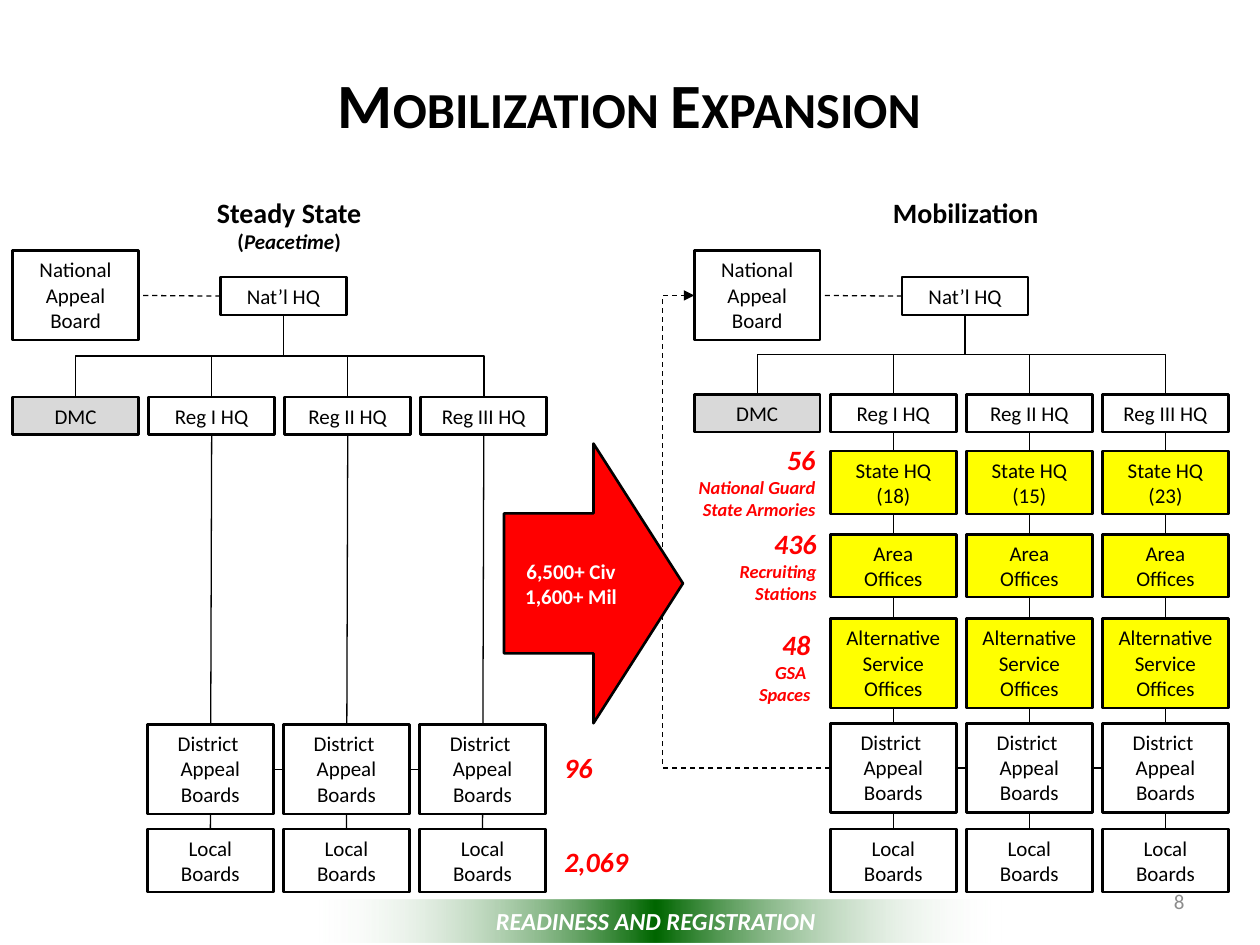
from dataclasses import dataclass

import pptx
import pptx.util
from pptx.dml.color import RGBColor
from pptx.enum.dml import MSO_LINE
from pptx.enum.shapes import MSO_CONNECTOR, MSO_SHAPE
from pptx.enum.text import MSO_ANCHOR, MSO_AUTO_SIZE, PP_ALIGN
from pptx.oxml import parse_xml
from pptx.oxml.ns import nsdecls, qn
from pptx.util import Inches, Pt

BLACK = RGBColor(0x00, 0x00, 0x00)
WHITE = RGBColor(0xFF, 0xFF, 0xFF)
RED = RGBColor(0xFF, 0x00, 0x00)
YELLOW = RGBColor(0xFF, 0xFF, 0x00)
GRAY = RGBColor(0xD9, 0xD9, 0xD9)
NUMBER_GRAY = RGBColor(0x8C, 0x8C, 0x8C)

TOP, LEFT, BOTTOM, RIGHT = range(4)
COLUMN_STEP = 1.08
REGIONS = ["Reg I HQ", "Reg II HQ", "Reg III HQ"]
APPEAL = ["National", "Appeal Board"]
DISTRICT = ["District ", "Appeal", "Boards"]
LOCAL = ["Local Boards"]


@dataclass
class Style:
    size: float = 12
    color: RGBColor = BLACK
    bold: bool = False
    italic: bool = False
    align: PP_ALIGN = PP_ALIGN.CENTER


@dataclass
class Callout:
    x: float
    y: float
    w: float
    h: float
    number: str
    places: list[str]
    align: PP_ALIGN = PP_ALIGN.RIGHT


@dataclass
class Chart:
    x: float
    region_y: float


CALLOUTS = [
    Callout(5.38, 3.46, 1.19, 0.74, "56", ["National Guard", "State Armories"]),
    Callout(5.72, 4.13, 0.86, 0.74, "436", ["Recruiting", "Stations"]),
    Callout(5.91, 4.93, 0.62, 0.72, "48", ["GSA ", "Spaces"]),
    Callout(4.38, 5.91, 0.43, 0.37, "96", [], PP_ALIGN.LEFT),
    Callout(4.38, 6.65, 0.72, 0.37, "2,069", [], PP_ALIGN.LEFT),
]


def style_paragraph(p, style: Style) -> None:
    p.alignment = style.align
    f = p.font
    f.name, f.size, f.color.rgb = "Calibri", Pt(style.size), style.color
    f.bold, f.italic = style.bold, style.italic


def write(sp, lines: list[str], style: Style, anchor=MSO_ANCHOR.TOP, wrap: bool = True):
    tf = sp.text_frame
    tf.word_wrap, tf.vertical_anchor = wrap, anchor
    if anchor == MSO_ANCHOR.TOP:
        tf.auto_size = MSO_AUTO_SIZE.SHAPE_TO_FIT_TEXT
    for i, line in enumerate(lines):
        p = tf.paragraphs[0] if i == 0 else tf.add_paragraph()
        p.add_run().text = line
        style_paragraph(p, style)
    return tf


def text_box(s, x: float, y: float, w: float, h: float, lines, style, **options):
    sp = s.shapes.add_textbox(Inches(x), Inches(y), Inches(w), Inches(h))
    return write(sp, lines, style, **options)


def add_shape(s, kind, x: float, y: float, w: float, h: float, fill=None):
    sp = s.shapes.add_shape(kind, Inches(x), Inches(y), Inches(w), Inches(h))
    sp.shadow.inherit = False
    if fill is None:
        sp.fill.background()
    else:
        sp.fill.solid()
        sp.fill.fore_color.rgb = fill
    sp.line.color.rgb, sp.line.width = BLACK, Pt(1.5)
    return sp


def unit(s, x: float, y: float, h: float, lines: list[str], fill=None):
    sp = add_shape(s, MSO_SHAPE.RECTANGLE, x, y, 1, h, fill)
    write(sp, lines, Style())
    return sp


def row(s, x: float, y: float, h: float, labels: list[list[str]], fill=None) -> list:
    return [unit(s, x + i * COLUMN_STEP, y, h, lines, fill) for i, lines in enumerate(labels)]


def join(s, a, a_side: int, b, b_side: int, kind=MSO_CONNECTOR.STRAIGHT, dash: bool = False):
    c = s.shapes.add_connector(kind, 0, 0, 0, 0)
    c.begin_connect(a, a_side)
    c.end_connect(b, b_side)
    c.line.color.rgb, c.line.width = BLACK, Pt(0.75)
    if dash:
        c.line.dash_style = MSO_LINE.DASH
    c._element.spPr.append(parse_xml(f"<a:effectLst {nsdecls('a')}/>"))
    return c


def branch(s, parent, child) -> None:
    """Elbow that leaves the parent downward and enters the child's top."""
    c = join(s, parent, BOTTOM, child, TOP, MSO_CONNECTOR.ELBOW)
    goes_right = c.end_x > c.begin_x
    center_x, center_y = c.left + c.width // 2, c.top + c.height // 2
    c.width, c.height = c.height, c.width
    c.left, c.top = center_x - c.width // 2, center_y - c.height // 2
    xfrm = c._element.spPr.find(qn("a:xfrm"))
    xfrm.set("rot", "16200000" if goes_right else "5400000")
    xfrm.set("flipH", "1" if goes_right else "0")
    xfrm.set("flipV", "0")


def headquarters(s, chart: Chart) -> tuple:
    """Draw the levels down to the regions; return appeal board and regions."""
    hq = unit(s, chart.x + 1.65, 2.2, 0.3, ["Nat’l HQ"])
    appeal = unit(s, chart.x, 1.99, 0.71, APPEAL)
    dmc = unit(s, chart.x, chart.region_y, 0.3, ["DMC"], GRAY)
    regions = row(s, chart.x + COLUMN_STEP, chart.region_y, 0.3, [[r] for r in REGIONS])
    for child in [dmc, *regions]:
        branch(s, hq, child)
    join(s, hq, LEFT, appeal, RIGHT, dash=True)
    return appeal, regions


def link_columns(s, upper: list, lower: list) -> None:
    for a, b in zip(upper, lower):
        join(s, a, BOTTOM, b, TOP)


def link_neighbors(s, boxes: list) -> None:
    for a, b in zip(boxes, boxes[1:]):
        join(s, a, RIGHT, b, LEFT)


def footer_band(s) -> None:
    sp = add_shape(s, MSO_SHAPE.RECTANGLE, 2.46, 7.14, 5.49, 0.34)
    sp.line.fill.background()
    sp.fill.gradient()
    sp.fill.gradient_angle = 0
    stops = sp._element.spPr.find(qn("a:gradFill")).find(qn("a:gsLst"))
    for stop in list(stops):
        stops.remove(stop)
    for pos, color, alpha in [(0, WHITE, 0), (50, "006600", 100), (100, WHITE, 0)]:
        stops.append(parse_xml(
            f'<a:gs {nsdecls("a")} pos="{pos * 1000}"><a:srgbClr val="{color}">'
            f'<a:alpha val="{alpha * 1000}"/></a:srgbClr></a:gs>'))
    write(sp, ["READINESS AND REGISTRATION"], Style(14, WHITE, True, True))


def main() -> None:
    prs = pptx.Presentation()
    prs.slide_width, prs.slide_height = Inches(10), Inches(7.5)
    s = prs.slides.add_slide(prs.slide_layouts[6])

    # Footer and title
    footer_band(s)
    tf = text_box(s, 0.83, 0.42, 8.33, 0.8, ["Mobilization Expansion"],
                  Style(36, bold=True), anchor=MSO_ANCHOR.MIDDLE)
    tf.paragraphs[0].runs[0].font._element.set("cap", "small")

    # Steady state: regions connect straight to the boards
    _, regions = headquarters(s, Chart(0.1, 3.15))
    locals_ = row(s, 1.17, 6.58, 0.5, [LOCAL] * 3)
    link_columns(s, regions, locals_)
    link_neighbors(s, row(s, 1.17, 5.75, 0.71, [DISTRICT] * 3, WHITE))

    # Mobilization: added levels in yellow
    appeal, regions = headquarters(s, Chart(5.51, 3.13))
    x = 5.51 + COLUMN_STEP
    states = [["State HQ", f"({count})"] for count in (18, 15, 23)]
    levels = [
        regions,
        row(s, x, 3.58, 0.5, states, YELLOW),
        row(s, x, 4.24, 0.5, [["Area Offices"]] * 3, YELLOW),
        row(s, x, 4.91, 0.71, [["Alternative", "Service Offices"]] * 3, YELLOW),
        row(s, x, 5.74, 0.71, [DISTRICT] * 3, WHITE),
        row(s, x, 6.58, 0.5, [LOCAL] * 3),
    ]
    for upper, lower in zip(levels, levels[1:]):
        link_columns(s, upper, lower)
    districts = levels[4]
    link_neighbors(s, districts)

    # Appeal route from the district boards to the national board
    route = join(s, districts[0], LEFT, appeal, LEFT, MSO_CONNECTOR.ELBOW, dash=True)
    route.line._get_or_add_ln().append(parse_xml(f'<a:tailEnd {nsdecls("a")} type="triangle"/>'))
    geometry = route._element.spPr.find(qn("a:prstGeom"))
    geometry.find(qn("a:avLst")).append(
        parse_xml(f'<a:gd {nsdecls("a")} name="adj1" fmla="val 123300"/>'))

    # Expansion arrow
    arrow = add_shape(s, MSO_SHAPE.RIGHT_ARROW, 4, 3.52, 1.42, 2.22, RED)
    write(arrow, ["6,500+ Civ", "1,600+ Mil"], Style(12, WHITE, True), MSO_ANCHOR.MIDDLE)

    # Headings
    heading = Style(16, bold=True)
    p = text_box(s, 1.54, 1.5, 1.51, 0.57, ["Steady State "], heading).paragraphs[0]
    for text, italic in [("(", False), ("Peacetime", True), (")", False)]:
        r = p.add_run()
        r.text, r.font.size, r.font.italic = text, Pt(12), italic
    text_box(s, 6.91, 1.5, 1.51, 0.37, ["Mobilization"], heading)

    # Site counts
    for c in CALLOUTS:
        tf = text_box(s, c.x, c.y, c.w, c.h, [c.number, *c.places],
                      Style(10.5, RED, True, True, c.align), wrap=False)
        tf.paragraphs[0].font.size = Pt(16)

    # Slide number
    text_box(s, 7.17, 6.95, 2.33, 0.4, ["8"],
             Style(12, NUMBER_GRAY, align=PP_ALIGN.RIGHT), anchor=MSO_ANCHOR.MIDDLE)
    prs.save("out.pptx")


if __name__ == "__main__":
    main()
